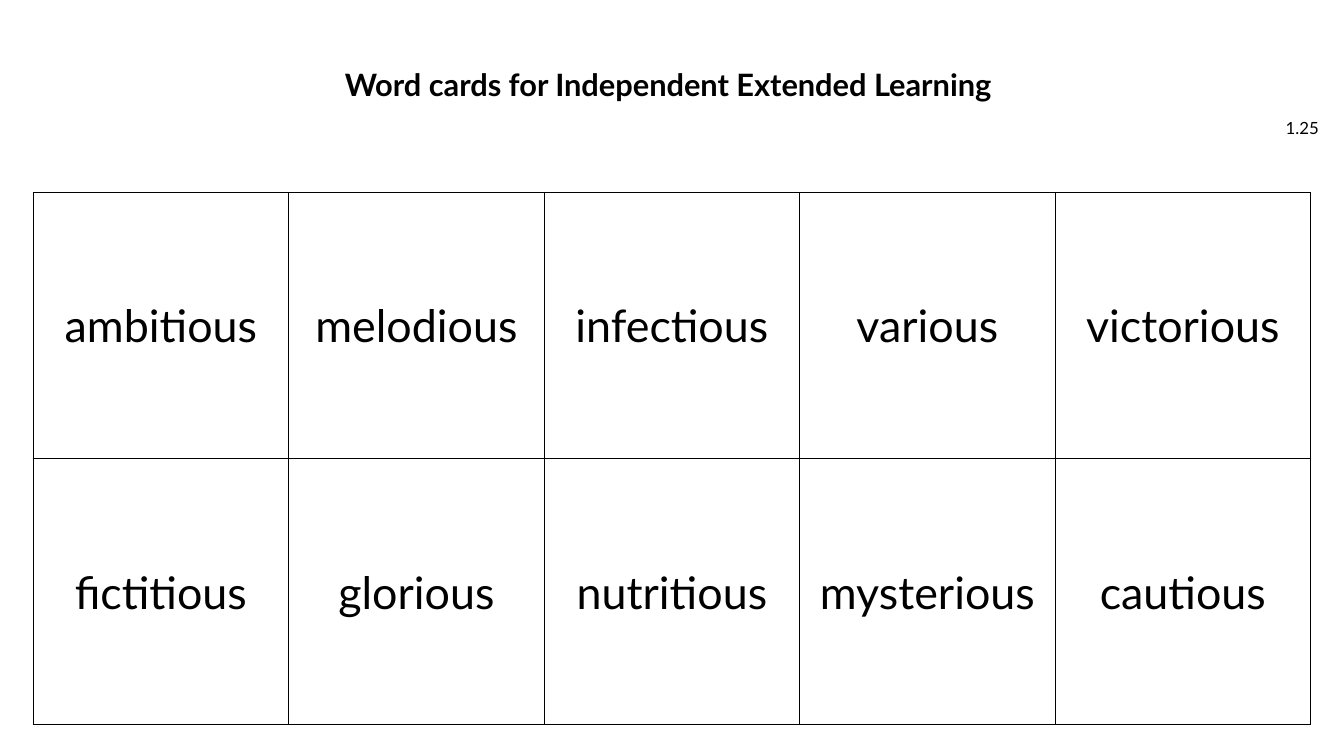
from lxml import etree
from pptx import Presentation
from pptx.dml.color import RGBColor
from pptx.enum.text import MSO_ANCHOR, PP_ALIGN
from pptx.oxml.ns import qn
from pptx.util import Inches, Pt

CENTER, RIGHT = PP_ALIGN.CENTER, PP_ALIGN.RIGHT
TOP, MIDDLE = MSO_ANCHOR.TOP, MSO_ANCHOR.MIDDLE

TITLE = "Word cards for Independent Extended Learning "
CARD_NUMBER = "1.25"
WORDS = [
    ["ambitious", "melodious", "infectious", "various", "victorious"],
    ["fictitious", "glorious", "nutritious", "mysterious", "cautious"],
]
COLORS = {"ink": "000000"}
FONT = "Lato"
TABLE_LEFT, TABLE_TOP, TABLE_WIDTH, TABLE_HEIGHT = 0.33, 1.91, 12.67, 5.28
BORDER_WIDTH = 1


def write(paragraph, text, size, alignment, bold=False):
    paragraph.text = text
    paragraph.alignment = alignment
    font = paragraph.font
    font.name, font.size, font.bold = FONT, Pt(size), bold
    font.color.rgb = RGBColor.from_string(COLORS["ink"])


def add_label(slide, box, text, size, alignment, anchor, bold=False):
    frame = slide.shapes.add_textbox(*map(Inches, box)).text_frame
    frame.word_wrap = True
    frame.vertical_anchor = anchor
    write(frame.paragraphs[0], text, size, alignment, bold)
    return frame


def add_borders(cell):
    properties = cell._tc.get_or_add_tcPr()
    for position, side in enumerate(("a:lnL", "a:lnR", "a:lnT", "a:lnB")):
        line = etree.Element(qn(side), w=str(Pt(BORDER_WIDTH)))
        fill = etree.SubElement(line, qn("a:solidFill"))
        etree.SubElement(fill, qn("a:srgbClr"), val=COLORS["ink"])
        properties.insert(position, line)


def add_word_cards(slide):
    rows, columns = len(WORDS), len(WORDS[0])
    box = map(Inches, (TABLE_LEFT, TABLE_TOP, TABLE_WIDTH, TABLE_HEIGHT))
    table = slide.shapes.add_table(rows, columns, *box).table
    table.first_row = table.horz_banding = False
    for row, words in enumerate(WORDS):
        for column, word in enumerate(words):
            cell = table.cell(row, column)
            cell.fill.background()
            cell.vertical_anchor = MIDDLE
            write(cell.text_frame.paragraphs[0], word, 32, CENTER)
            add_borders(cell)


def main():
    presentation = Presentation()
    presentation.slide_width = Inches(13.33)
    presentation.slide_height = Inches(7.5)
    slide = presentation.slides.add_slide(presentation.slide_layouts[6])

    add_label(slide, (12.55, 1.07, 0.63, 0.4), CARD_NUMBER, 12, RIGHT, MIDDLE)
    title = add_label(slide, (2.31, 0.64, 8.71, 0.35), TITLE, 22, CENTER, TOP, bold=True)
    title.paragraphs[0].line_spacing = 0.9
    add_word_cards(slide)
    presentation.save("out.pptx")


if __name__ == "__main__":
    main()
